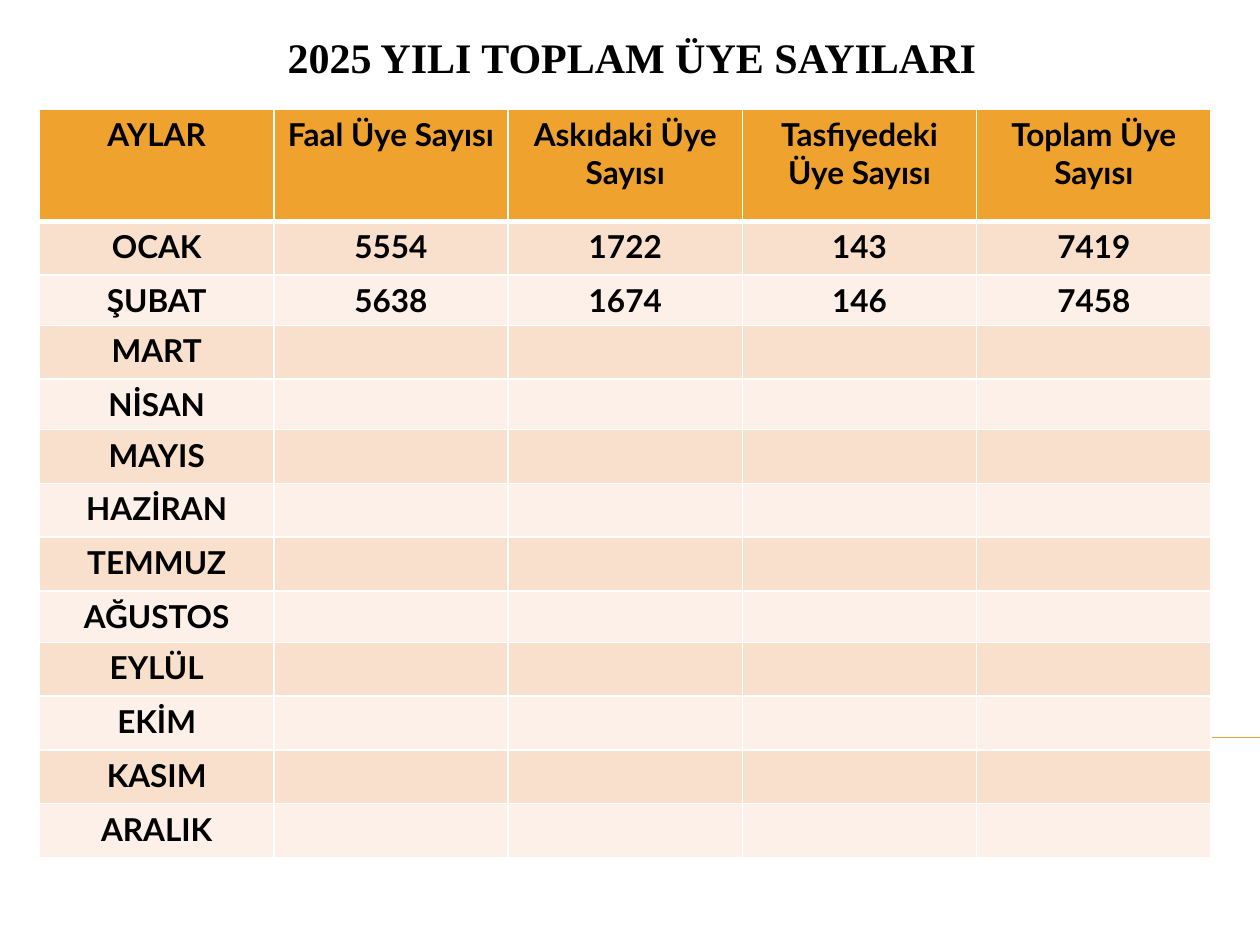
from dataclasses import dataclass

from lxml.etree import SubElement
from pptx import Presentation
from pptx.dml.color import RGBColor
from pptx.enum.shapes import MSO_CONNECTOR
from pptx.enum.text import MSO_ANCHOR, PP_ALIGN
from pptx.oxml.ns import qn
from pptx.util import Pt

TITLE = "2025 YILI TOPLAM ÜYE SAYILARI"
HEADERS = ["AYLAR", "Faal Üye Sayısı", "Askıdaki Üye Sayısı",
           "Tasfiyedeki Üye Sayısı", "Toplam Üye Sayısı"]
MONTHS = ["OCAK", "ŞUBAT", "MART", "NİSAN", "MAYIS", "HAZİRAN", "TEMMUZ",
          "AĞUSTOS", "EYLÜL", "EKİM", "KASIM", "ARALIK"]
COUNTS = {
    "OCAK": [5554, 1722, 143, 7419],
    "ŞUBAT": [5638, 1674, 146, 7458],
}

HEADER_HEIGHT = 64.3
MONTH_HEIGHT = 30.7
SHORT_HEIGHTS = {"ŞUBAT": 28.8, "NİSAN": 28.8, "AĞUSTOS": 29.5}
TABLE_LEFT, TABLE_TOP, TABLE_WIDTH = 22.6, 62.2, 669.5


@dataclass(frozen=True)
class Theme:
    accent: str = "F0A22E"
    bands: tuple = ("F9E0CD", "FCF0E8")
    border: str = "FFFFFF"
    text: str = "000000"
    title_font: str = "Times New Roman"
    table_font: str = "Lato"
    title_size: int = 24
    table_size: int = 18


THEME = Theme()


def style_paragraph(paragraph, font_name, size):
    paragraph.alignment = PP_ALIGN.CENTER
    font = paragraph.font
    font.name = font_name
    font.size = Pt(size)
    font.bold = True
    font.color.rgb = RGBColor.from_string(THEME.text)


def add_accent_line(slide):
    line = slide.shapes.add_connector(
        MSO_CONNECTOR.STRAIGHT, Pt(40.3), Pt(421.4), Pt(720), Pt(421.4))
    line.line.color.rgb = RGBColor.from_string(THEME.accent)
    line.line.width = Pt(0.75)
    SubElement(line.element.spPr, qn("a:effectLst"))


def add_title(slide):
    box = slide.shapes.add_textbox(Pt(28), Pt(16.5), Pt(666), Pt(34))
    frame = box.text_frame
    frame.word_wrap = True
    frame.vertical_anchor = MSO_ANCHOR.BOTTOM
    frame.text = TITLE
    style_paragraph(frame.paragraphs[0], THEME.title_font, THEME.title_size)


def set_borders(cell, top, bottom):
    """Draw the four cell borders; top and bottom are widths in points."""
    properties = cell._tc.get_or_add_tcPr()
    for side, width in (("L", 1), ("R", 1), ("T", top), ("B", bottom)):
        border = SubElement(properties, qn(f"a:ln{side}"), w=str(Pt(width)))
        fill = SubElement(border, qn("a:solidFill"))
        SubElement(fill, qn("a:srgbClr"), val=THEME.border)


def add_member_table(slide):
    rows = [HEADERS]
    for month in MONTHS:
        rows.append([month, *COUNTS.get(month, [""] * (len(HEADERS) - 1))])
    heights = [HEADER_HEIGHT]
    heights += [SHORT_HEIGHTS.get(month, MONTH_HEIGHT) for month in MONTHS]

    table = slide.shapes.add_table(
        len(rows), len(HEADERS), Pt(TABLE_LEFT), Pt(TABLE_TOP),
        Pt(TABLE_WIDTH), Pt(sum(heights))).table
    table.first_row = False
    table.horz_banding = False
    for column in table.columns:
        column.width = Pt(TABLE_WIDTH / len(HEADERS))

    for row_index, (values, height) in enumerate(zip(rows, heights)):
        table.rows[row_index].height = Pt(height)
        color = THEME.bands[(row_index - 1) % 2] if row_index else THEME.accent
        for column_index, value in enumerate(values):
            cell = table.cell(row_index, column_index)
            cell.text = str(value)
            style_paragraph(cell.text_frame.paragraphs[0],
                            THEME.table_font, THEME.table_size)
            set_borders(cell, top=3 if row_index == 1 else 1,
                        bottom=3 if row_index == 0 else 1)
            cell.fill.solid()
            cell.fill.fore_color.rgb = RGBColor.from_string(color)


def main():
    presentation = Presentation()
    presentation.slide_width = Pt(720)
    presentation.slide_height = Pt(540)
    slide = presentation.slides.add_slide(presentation.slide_layouts[6])
    add_accent_line(slide)
    add_title(slide)
    add_member_table(slide)
    presentation.save("out.pptx")


if __name__ == "__main__":
    main()
